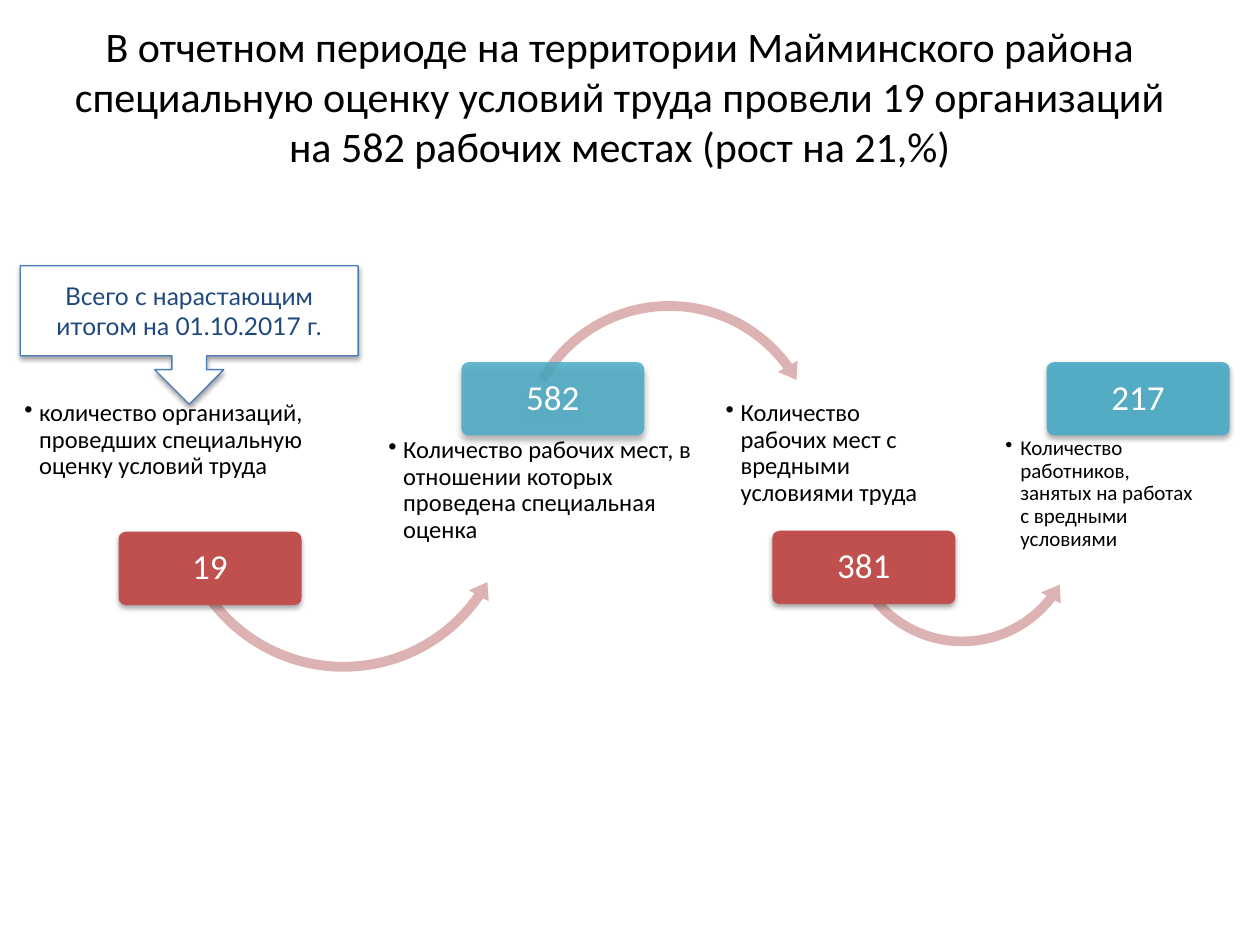
from lxml.etree import SubElement
from pptx import Presentation
from pptx.dml.color import RGBColor
from pptx.enum.shapes import MSO_SHAPE
from pptx.enum.text import MSO_ANCHOR, PP_ALIGN
from pptx.oxml.ns import qn
from pptx.util import Cm, Pt

COLORS = {"black": "000000", "white": "FFFFFF", "red": "C0504D", "teal": "4BACC6",
          "arc": "DCB3B2", "line": "4B7EBC", "navy": "1F497D"}
CARD_TOP, CARD_H = 8, 3.43
TEXT_H = 2.69
BADGE_W, BADGE_H = 3.69, 1.48

# Arc: x and y within the card, size, adjustments
STEPS = [
    dict(x=0.41, w=5.94, label="количество организаций, проведших специальную оценку условий труда",
         value="19", badge_x=1.98, badge_y=2.72, color="red",
         arc=(2.97, -1.42, 7.09, (0.028, 3.377, 20.796, 89.909, 0.032))),
    dict(x=7.75, w=6.35, label="Количество рабочих мест, в отношении которых проведена специальная оценка",
         value="582", badge_x=1.55, badge_y=-0.7, color="teal", alpha=85, shadow=(4, 3),
         arc=(2.57, -2.06, 6.35, (0.031, 3.8, 194.445, 125.755, 0.036))),
    dict(x=14.55, w=4.34, label="Количество рабочих мест с вредными условиями труда",
         value="381", badge_x=1.02, badge_y=2.7, color="red",
         arc=(2.36, 0.18, 4.98, (0.039, 4.947, 22.702, 90.245, 0.046))),
    dict(x=20.19, w=4.14, label="Количество работников, занятых на работах с вредными условиями",
         value="217", badge_x=0.91, badge_y=-0.7, color="teal", alpha=91, size=12),
]


def rgb(name):
    return RGBColor.from_string(COLORS[name])


def set_alpha(color, percent):
    SubElement(color, qn("a:alpha"), val=str(percent * 1000))


def add_shadow(sp, blur, dist, alpha):
    """Drop a black shadow straight down; blur and dist are in points."""
    effects = sp._element.spPr.find(qn("a:effectLst"))
    shadow = SubElement(effects, qn("a:outerShdw"), blurRad=str(Pt(blur)),
                        dist=str(Pt(dist)), dir="5400000", rotWithShape="0")
    set_alpha(SubElement(shadow, qn("a:srgbClr"), val=COLORS["black"]), alpha)


def add_shape(slide, kind, box, fill, alpha=100):
    sp = slide.shapes.add_shape(kind, *map(Cm, box))
    sp.shadow.inherit = False
    sp.fill.solid()
    sp.fill.fore_color.rgb = rgb(fill)
    sp.line.fill.background()
    if alpha < 100:
        set_alpha(sp._element.spPr.find(qn("a:solidFill"))[0], alpha)
    return sp


def set_text(sp, text, size, color, font="Calibri", margins=(0.25, 0.13),
             anchor=MSO_ANCHOR.MIDDLE, **paragraph):
    tf = sp.text_frame
    side, end = map(Cm, margins)
    frame = dict(word_wrap=True, vertical_anchor=anchor, margin_left=side,
                 margin_right=side, margin_top=end, margin_bottom=end)
    for name, value in frame.items():
        setattr(tf, name, value)
    p = tf.paragraphs[0]
    for name, value in paragraph.items():
        setattr(p, name, value)
    r = p.add_run()
    r.text = text
    for name, value in dict(name=font, size=Pt(size)).items():
        setattr(r.font, name, value)
    r.font.color.rgb = rgb(color)
    return p


def add_bullet(p):
    pPr = p._p.get_or_add_pPr()
    pPr.set("marL", str(Cm(0.3)))
    pPr.set("indent", str(Cm(-0.3)))
    SubElement(pPr, qn("a:buChar"), char="•")


def add_title(slide, box):
    title = slide.shapes.title
    for name, value in zip(("left", "top", "width", "height"), box):
        setattr(title, name, Cm(value))
    set_text(title, "В отчетном периоде на территории Майминского района специальную "
             "оценку условий труда провели 19 организаций на 582 рабочих местах "
             "(рост на 21,%)", 24, "black", alignment=PP_ALIGN.CENTER)


def add_step(slide, x, y, w, label, value, badge_x, badge_y, color,
             alpha=100, shadow=(3.1, 1.8), size=14, arc=None):
    """Draw a card with its label, the arc to the next card and the value badge."""
    card = add_shape(slide, MSO_SHAPE.ROUNDED_RECTANGLE, (x, y, w, CARD_H), "white", 90)
    card.adjustments[0] = 0.1

    # A badge on the top edge pushes the label to the bottom of the card
    text_y = y + (CARD_H - TEXT_H if badge_y < 0 else 0)
    s = slide.shapes.add_textbox(*map(Cm, (x, text_y, w, TEXT_H)))
    add_bullet(set_text(s, label, size, "black", margins=(0.08, 0.08),
                        anchor=MSO_ANCHOR.TOP, line_spacing=0.9))

    if arc:
        dx, dy, side, adjustments = arc
        kind = MSO_SHAPE.CIRCULAR_ARROW if badge_y < 0 else MSO_SHAPE.LEFT_CIRCULAR_ARROW
        arrow = add_shape(slide, kind, (x + dx, y + dy, side, side), "arc")
        for i, adjustment in enumerate(adjustments):
            arrow.adjustments[i] = adjustment

    badge = add_shape(slide, MSO_SHAPE.ROUNDED_RECTANGLE,
                      (x + badge_x, y + badge_y, BADGE_W, BADGE_H), color, alpha)
    badge.adjustments[0] = 0.1
    add_shadow(badge, *shadow, 35)
    set_text(badge, value, 20, "white", margins=(0.1, 0.08),
             alignment=PP_ALIGN.CENTER, line_spacing=0.9)


def add_callout(slide, box):
    sp = add_shape(slide, MSO_SHAPE.DOWN_ARROW_CALLOUT, box, "white")
    sp.line.color.rgb = rgb("line")
    sp.line.width = Pt(0.75)
    add_shadow(sp, 3.1, 1.6, 38)
    set_text(sp, "Всего с нарастающим итогом на 01.10.2017 г.", 14, "navy",
             font="Lato", alignment=PP_ALIGN.CENTER)


def main():
    prs = Presentation()
    prs.slide_width, prs.slide_height = Cm(25.4), Cm(19.05)
    slide = prs.slides.add_slide(prs.slide_layouts[5])
    add_title(slide, (0.9, 0.23, 23.19, 3.4))
    for step in STEPS:
        add_step(slide, y=CARD_TOP, **step)
    add_callout(slide, (0.41, 5.36, 6.81, 2.79))
    prs.save("out.pptx")


if __name__ == "__main__":
    main()
